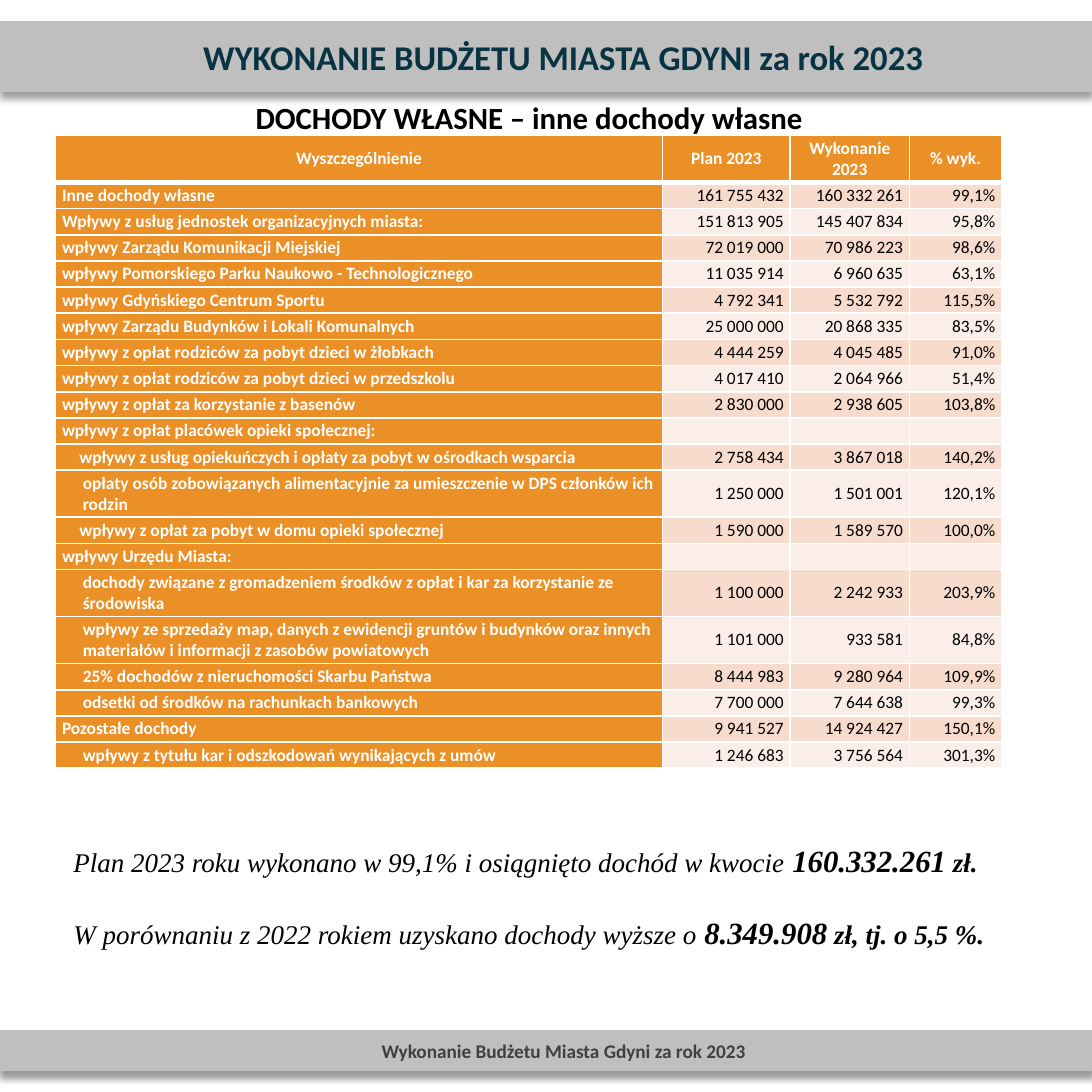
from lxml import etree
from pptx import Presentation
from pptx.dml.color import RGBColor
from pptx.enum.shapes import MSO_SHAPE
from pptx.enum.text import MSO_ANCHOR, PP_ALIGN
from pptx.oxml import parse_xml
from pptx.oxml.ns import qn
from pptx.util import Pt

RECT = MSO_SHAPE.RECTANGLE
MIDDLE = MSO_ANCHOR.MIDDLE
LEFT, CENTER, RIGHT, JUSTIFY = PP_ALIGN.LEFT, PP_ALIGN.CENTER, PP_ALIGN.RIGHT, PP_ALIGN.JUSTIFY
NS = 'xmlns:a="http://schemas.openxmlformats.org/drawingml/2006/main"'
SHADOW = f'''<a:effectLst {NS}><a:outerShdw blurRad="50800" dist="38100" dir="5400000" rotWithShape="0">
<a:srgbClr val="000000"><a:alpha val="40000"/></a:srgbClr></a:outerShdw></a:effectLst>'''


def color(text):
    return RGBColor.from_string(text)


def style(par, size, tint, bold, align, face="Calibri"):
    par.alignment = align
    par.font.name = face
    par.font.size = Pt(size)
    par.font.bold = bold
    par.font.color.rgb = color(tint)


prs = Presentation()
prs.slide_width = prs.slide_height = Pt(566.64)
slide = prs.slides.add_slide(prs.slide_layouts[6])
shapes = slide.shapes

for top, height, text, size, tint in [
    (534.96, 20.16, "Wykonanie Budżetu Miasta Gdyni za rok 2023", 10, "404040"),
    (11.52, 36, "WYKONANIE BUDŻETU MIASTA GDYNI za rok 2023", 18, "083343"),
]:
    band = shapes.add_shape(RECT, 0, Pt(top), prs.slide_width, Pt(height))
    band.fill.solid()
    band.fill.fore_color.rgb = color("BFBFBF")
    band.line.color.rgb = color("BFBFBF")
    band.line.width = Pt(1)
    band._element.spPr.append(parse_xml(SHADOW))
    frame = band.text_frame
    frame.margin_left = Pt(25.2)
    frame.vertical_anchor = MIDDLE
    frame.text = text
    style(frame.paragraphs[0], size, tint, True, CENTER)

title = shapes.add_textbox(Pt(57.6), Pt(47.52), Pt(434.16), Pt(26.64)).text_frame
title.word_wrap = True
title.text = "DOCHODY WŁASNE – inne dochody własne"
style(title.paragraphs[0], 16, "000000", True, CENTER)

notes = shapes.add_textbox(Pt(30.96), Pt(433.44), Pt(495.36), Pt(99.36)).text_frame
notes.word_wrap = True
lines = [
    ("Plan 2023 roku wykonano w 99,1% i osiągnięto dochód w kwocie ", "160.332.261", " zł."),
    ("W porównaniu z 2022 rokiem uzyskano dochody wyższe o ", "8.349.908", " zł, tj. o 5,5 %."),
]
for index, parts in enumerate(lines):
    par = notes.add_paragraph() if index else notes.paragraphs[0]
    style(par, 14, "000000", False, JUSTIFY, "Times New Roman")
    par.font.italic = True
    par.space_before, par.space_after = Pt(12), Pt(6)
    for text, size, bold in zip(parts, (14, 16, 14), (False, True, True)):
        run = par.add_run()
        run.text = text
        run.font.size = Pt(size)
        run.font.bold = bold

LOW, HIGH = 13.6, 24.4
rows = [
    (0, HIGH, "Wyszczególnienie", "Plan 2023", "Wykonanie 2023", "% wyk."),
    (0, LOW, "Inne dochody własne", "161 755 432", "160 332 261", "99,1%"),
    (0, LOW, "Wpływy z usług jednostek organizacyjnych miasta:", "151 813 905", "145 407 834", "95,8%"),
    (0, LOW, "wpływy Zarządu Komunikacji Miejskiej", "72 019 000", "70 986 223", "98,6%"),
    (0, LOW, "wpływy Pomorskiego Parku Naukowo - Technologicznego", "11 035 914", "6 960 635", "63,1%"),
    (0, LOW, "wpływy Gdyńskiego Centrum Sportu", "4 792 341", "5 532 792", "115,5%"),
    (0, LOW, "wpływy Zarządu Budynków i Lokali Komunalnych", "25 000 000", "20 868 335", "83,5%"),
    (0, LOW, "wpływy z opłat rodziców za pobyt dzieci w żłobkach", "4 444 259", "4 045 485", "91,0%"),
    (0, LOW, "wpływy z opłat rodziców za pobyt dzieci w przedszkolu", "4 017 410", "2 064 966", "51,4%"),
    (0, LOW, "wpływy z opłat za korzystanie z basenów", "2 830 000", "2 938 605", "103,8%"),
    (0, LOW, "wpływy z opłat placówek opieki społecznej:", "", "", ""),
    (9, LOW, "wpływy z usług opiekuńczych i opłaty za pobyt w ośrodkach wsparcia",
     "2 758 434", "3 867 018", "140,2%"),
    (10.8, HIGH, "opłaty osób zobowiązanych alimentacyjnie za umieszczenie w DPS członków ich rodzin",
     "1 250 000", "1 501 001", "120,1%"),
    (9, LOW, "wpływy z opłat za pobyt w domu opieki społecznej", "1 590 000", "1 589 570", "100,0%"),
    (0, LOW, "wpływy Urzędu Miasta:", "", "", ""),
    (10.8, HIGH, "dochody związane z gromadzeniem środków z opłat i kar za korzystanie ze środowiska",
     "1 100 000", "2 242 933", "203,9%"),
    (10.8, HIGH, "wpływy ze sprzedaży map, danych z ewidencji gruntów i budynków oraz innych "
     "materiałów i informacji z zasobów powiatowych", "1 101 000", "933 581", "84,8%"),
    (10.8, LOW, "25% dochodów z nieruchomości Skarbu Państwa", "8 444 983", "9 280 964", "109,9%"),
    (10.8, LOW, "odsetki od środków na rachunkach bankowych", "7 700 000", "7 644 638", "99,3%"),
    (0, LOW, "Pozostałe dochody", "9 941 527", "14 924 427", "150,1%"),
    (10.8, LOW, "wpływy z tytułu kar i odszkodowań wynikających z umów", "1 246 683", "3 756 564", "301,3%"),
]
widths = [436.6, 91.8, 85.8, 66.4]
scale = 491.04 / sum(widths)
total = sum(row[1] for row in rows)
table = shapes.add_table(len(rows), 4, Pt(28.8), Pt(70.3), Pt(491.04), Pt(total)).table
for column, width in zip(table.columns, widths):
    column.width = Pt(width * scale)

for r, (indent, height, *texts) in enumerate(rows):
    table.rows[r].height = Pt(height)
    for c, text in enumerate(texts):
        cell = table.cell(r, c)
        cell.margin_left = cell.margin_right = Pt(3.4)
        cell.margin_top = cell.margin_bottom = Pt(1.25)
        cell.vertical_anchor = MIDDLE
        cell.text = text
        par = cell.text_frame.paragraphs[0]
        label = r == 0 or c == 0
        align = CENTER if r == 0 else LEFT if c == 0 else RIGHT
        style(par, 9, "FFFFFF" if label else "000000", label, align)
        if c == 0 and indent:
            par._p.get_or_add_pPr().set("marL", str(Pt(indent)))
        if not text:
            etree.SubElement(par._p, qn("a:endParaRPr")).set("sz", "900")
        props = cell._tc.get_or_add_tcPr()
        for side in "LRTB":
            thick = (r == 0 and side == "B") or (r == 1 and side == "T")
            props.append(parse_xml(
                f'<a:ln{side} {NS} w="{Pt(3 if thick else 1)}"><a:solidFill>'
                f'<a:srgbClr val="FFFFFF"/></a:solidFill></a:ln{side}>'))
        cell.fill.solid()
        cell.fill.fore_color.rgb = color("EA9027" if label else "F7DBCD" if r % 2 else "FBEEE8")

prs.save("out.pptx")
